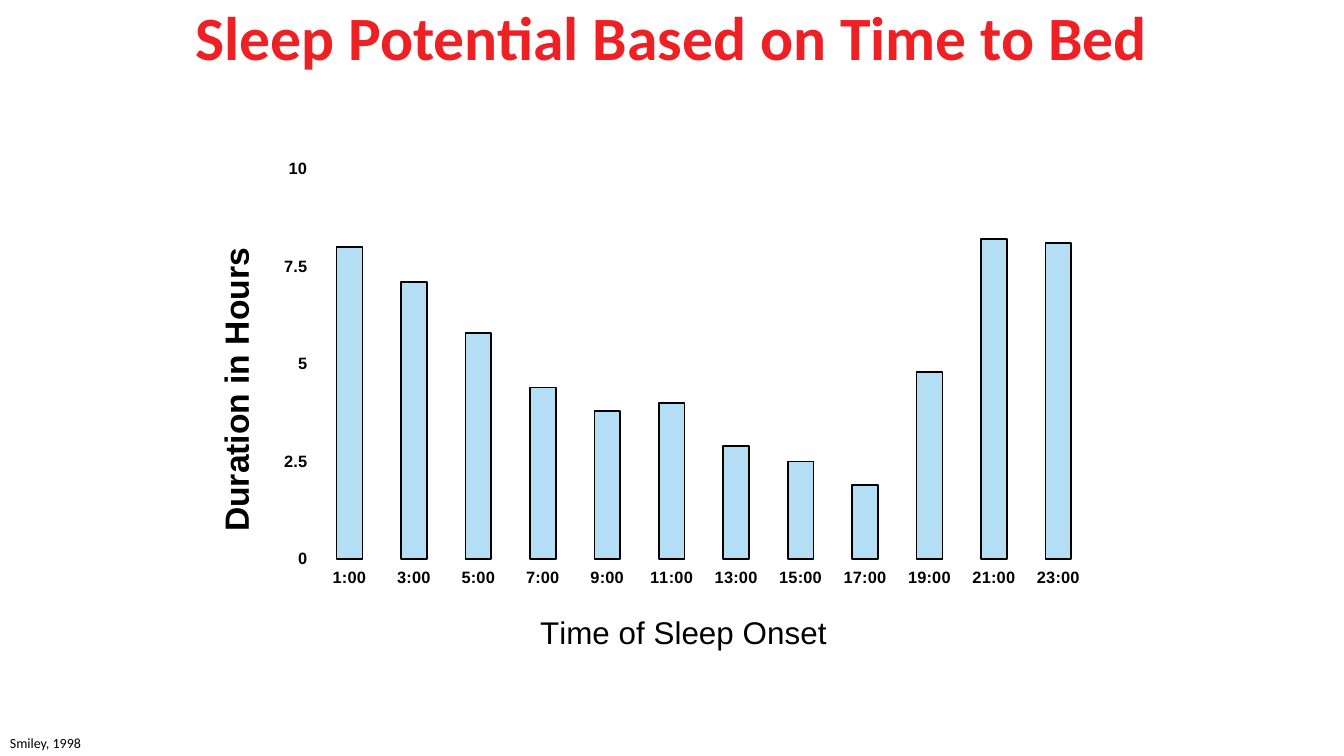
from lxml.etree import SubElement
from pptx import Presentation
from pptx.chart.data import CategoryChartData
from pptx.dml.color import RGBColor
from pptx.enum.chart import XL_CHART_TYPE, XL_TICK_LABEL_POSITION, XL_TICK_MARK
from pptx.enum.text import PP_ALIGN
from pptx.oxml.ns import qn
from pptx.util import Cm, Pt

COLORS = {"title": "EE2024", "text": "000000", "bar": "B3DEF3", "axis": "FFFFFF"}
HOURS = [8, 7.1, 5.8, 4.4, 3.8, 4, 2.9, 2.5, 1.9, 4.8, 8.2, 8.1]
ONSETS = [f"{hour}:00" for hour in range(1, 24, 2)]


def color(name):
    return RGBColor.from_string(COLORS[name])


def style_font(font, size, name="Arial", bold=False, fill="text"):
    font.size = Pt(size)
    font.name = name
    font.bold = bold
    font.color.rgb = color(fill)


def style_line(line, fill):
    line.color.rgb = color(fill)
    line.width = Pt(1.12)


def add_text(page, text, left, top, width, height, size, name="Calibri",
             bold=False, fill="text", wrap=True):
    box = page.shapes.add_textbox(Cm(left), Cm(top), Cm(width), Cm(height))
    box.text_frame.word_wrap = wrap
    para = box.text_frame.paragraphs[0]
    para.text = text
    style_font(para.runs[0].font, size, name, bold, fill)
    return box


def place(element, position, **values):
    layout = element.find(qn("c:layout"))
    if layout is None:
        layout = SubElement(element, qn("c:layout"))
        element.remove(layout)
        element.insert(position, layout)
    manual = SubElement(layout, qn("c:manualLayout"))
    for tag, value in values.items():
        SubElement(manual, qn(f"c:{tag}")).set("val", str(value))


def style_axis(axis):
    axis.has_major_gridlines = False
    axis.major_tick_mark = XL_TICK_MARK.OUTSIDE
    axis.tick_label_position = XL_TICK_LABEL_POSITION.LOW
    style_font(axis.tick_labels.font, 11.7, bold=True)
    style_line(axis.format.line, "axis")


def add_sleep_chart(page):
    data = CategoryChartData()
    data.categories = ONSETS
    data.add_series("Series 1", HOURS)
    chart = page.shapes.add_chart(
        XL_CHART_TYPE.COLUMN_CLUSTERED, Cm(5.46), Cm(3.73), Cm(22.25), Cm(13.28), data
    ).chart
    chart.has_legend = False
    chart.has_title = False
    style_font(chart.font, 17.9, "Karla", True)

    hours_axis, onset_axis = chart.value_axis, chart.category_axis
    for axis in (hours_axis, onset_axis):
        style_axis(axis)
    hours_axis.minimum_scale = 0
    hours_axis.maximum_scale = 10
    hours_axis.major_unit = 2.5
    hours_axis.tick_labels.number_format = "General"
    hours_axis.tick_labels.number_format_is_linked = False

    title = onset_axis.axis_title
    para = title.text_frame.paragraphs[0]
    para.text = "Time of Sleep Onset"
    style_font(para.runs[0].font, 22.4)
    place(title._element, 1, xMode="edge", yMode="edge", x=0.36, y=0.87)

    plot = chart.plots[0]
    plot.gap_width = 150
    plot.vary_by_categories = False
    bars = plot.series[0].format
    bars.fill.solid()
    bars.fill.fore_color.rgb = color("bar")
    style_line(bars.line, "text")
    plot_area = chart._chartSpace.chart.plotArea
    place(plot_area, 0, layoutTarget="inner", xMode="edge", yMode="edge",
          x=0.114, y=0.04, w=0.876, h=0.74)


def main():
    deck = Presentation()
    deck.slide_width, deck.slide_height = Cm(33.87), Cm(19.05)
    page = deck.slides.add_slide(deck.slide_layouts[6])
    add_text(page, "Smiley, 1998", 0, 18.39, 5.94, 0.66, 10)
    add_sleep_chart(page)
    label = add_text(page, "Duration in Hours", 2.11, 9.19, 7.65, 1.27, 24,
                     "Arial", True, wrap=False)
    label.rotation = 270
    heading = add_text(page, "Sleep Potential Based on Time to Bed", 0, 0.05, 33.87, 3.68,
                       44, bold=True, fill="title")
    para = heading.text_frame.paragraphs[0]
    para.alignment = PP_ALIGN.CENTER
    para.line_spacing = 0.9
    deck.save("out.pptx")


if __name__ == "__main__":
    main()
